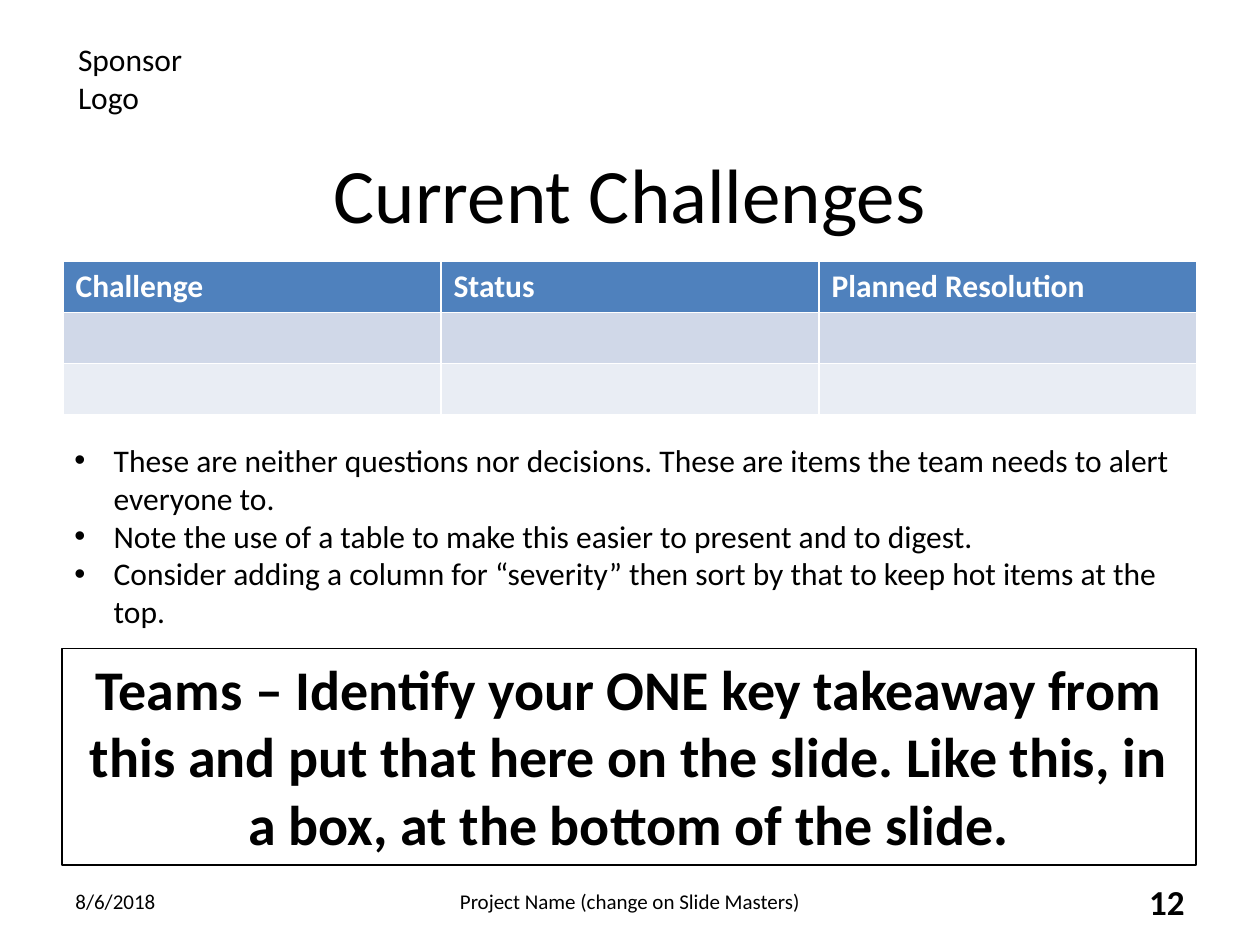
from lxml import etree
from pptx import Presentation
from pptx.dml.color import RGBColor
from pptx.enum import shapes, text
from pptx.oxml import ns
from pptx.util import Pt

BLACK = RGBColor(0x00, 0x00, 0x00)
WHITE = RGBColor(0xFF, 0xFF, 0xFF)
HEADER_BLUE = RGBColor(0x4F, 0x81, 0xBD)
BAND_DARK = RGBColor(0xD0, 0xD8, 0xE8)
BAND_LIGHT = RGBColor(0xE9, 0xED, 0xF4)
LEFT, CENTER, RIGHT = text.PP_ALIGN.LEFT, text.PP_ALIGN.CENTER, text.PP_ALIGN.RIGHT
TOP, MIDDLE = text.MSO_ANCHOR.TOP, text.MSO_ANCHOR.MIDDLE

MARGIN, CONTENT_WIDTH = 36, 648
FOOTER_TOP, FOOTER_HEIGHT = 500.5, 28.75
ROW_HEIGHT = 29.2
BULLET_INDENT = 22.5

challenges = [
    ["Challenge", "Status", "Planned Resolution"],
    ["", "", ""],
    ["", "", ""],
]
row_fills = [HEADER_BLUE, BAND_DARK, BAND_LIGHT]

guidance = [
    "These are neither questions nor decisions. These are items the team needs to alert everyone to.",
    "Note the use of a table to make this easier to present and to digest.",
    "Consider adding a column for “severity” then sort by that to keep hot items at the top.",
]
takeaway = (
    "Teams – Identify your ONE key takeaway from this and put that here on the slide. "
    "Like this, in a box, at the bottom of the slide."
)

labels = [
    ("Sponsor\nLogo", (37.5, 19.5, 110, 51), LEFT, TOP, {"size": Pt(18)}),
    ("Current Challenges", (MARGIN, 80.5, CONTENT_WIDTH, 59), CENTER, MIDDLE, {"size": Pt(44)}),
    ("8/6/2018", (MARGIN, FOOTER_TOP, 168, FOOTER_HEIGHT), LEFT, MIDDLE, {"size": Pt(12)}),
    ("Project Name (change on Slide Masters)", (246, FOOTER_TOP, 228, FOOTER_HEIGHT),
     CENTER, MIDDLE, {"size": Pt(12)}),
    ("12", (516, FOOTER_TOP, 168, FOOTER_HEIGHT), RIGHT, MIDDLE, {"size": Pt(20), "bold": True}),
]


def style_font(paragraph, color=BLACK, **formats):
    paragraph.font.color.rgb = color
    for name, value in {"name": "Calibri", **formats}.items():
        setattr(paragraph.font, name, value)


def fill_frame(frame, paragraphs, align, anchor, formats, bulleted=False):
    frame.word_wrap = True
    frame.vertical_anchor = anchor
    for index, words in enumerate(paragraphs):
        paragraph = frame.add_paragraph() if index else frame.paragraphs[0]
        paragraph.text = words
        paragraph.alignment = align
        if bulleted:
            properties = paragraph._p.get_or_add_pPr()
            properties.set("marL", str(Pt(BULLET_INDENT)))
            properties.set("indent", str(-Pt(BULLET_INDENT)))
            etree.SubElement(properties, ns.qn("a:buFont")).set("typeface", "Arial")
            etree.SubElement(properties, ns.qn("a:buChar")).set("char", "•")
        style_font(paragraph, **formats)


def points(place):
    return [Pt(length) for length in place]


def add_challenge_table(slide):
    rows, columns = len(challenges), len(challenges[0])
    place = points((MARGIN, 149.3, CONTENT_WIDTH, ROW_HEIGHT * rows))
    table = slide.shapes.add_table(rows, columns, *place).table
    for row, words, fill in zip(table.rows, challenges, row_fills):
        row.height = Pt(ROW_HEIGHT)
        for cell, word in zip(row.cells, words):
            cell.fill.solid()
            cell.fill.fore_color.rgb = fill
            cell.text = word
            header = fill == HEADER_BLUE
            style_font(cell.text_frame.paragraphs[0], WHITE if header else BLACK,
                       size=Pt(18), bold=header)


def main():
    deck = Presentation()
    deck.slide_width, deck.slide_height = Pt(720), Pt(540)
    slide = deck.slides.add_slide(deck.slide_layouts[6])

    add_challenge_table(slide)
    for words, place, align, anchor, formats in labels:
        label = slide.shapes.add_textbox(*points(place))
        fill_frame(label.text_frame, [words], align, anchor, formats)

    notes = slide.shapes.add_textbox(*points((35.4, 248.4, CONTENT_WIDTH, 116.6)))
    fill_frame(notes.text_frame, guidance, LEFT, TOP, {"size": Pt(18)}, bulleted=True)

    box = slide.shapes.add_shape(shapes.MSO_SHAPE.RECTANGLE,
                                 *points((35.4, 370.6, CONTENT_WIDTH, 123.8)))
    box.shadow.inherit = False
    box.fill.background()
    box.line.color.rgb = BLACK
    box.line.width = Pt(0.75)
    fill_frame(box.text_frame, [takeaway], CENTER, TOP, {"size": Pt(32), "bold": True})

    deck.save("out.pptx")


if __name__ == "__main__":
    main()
